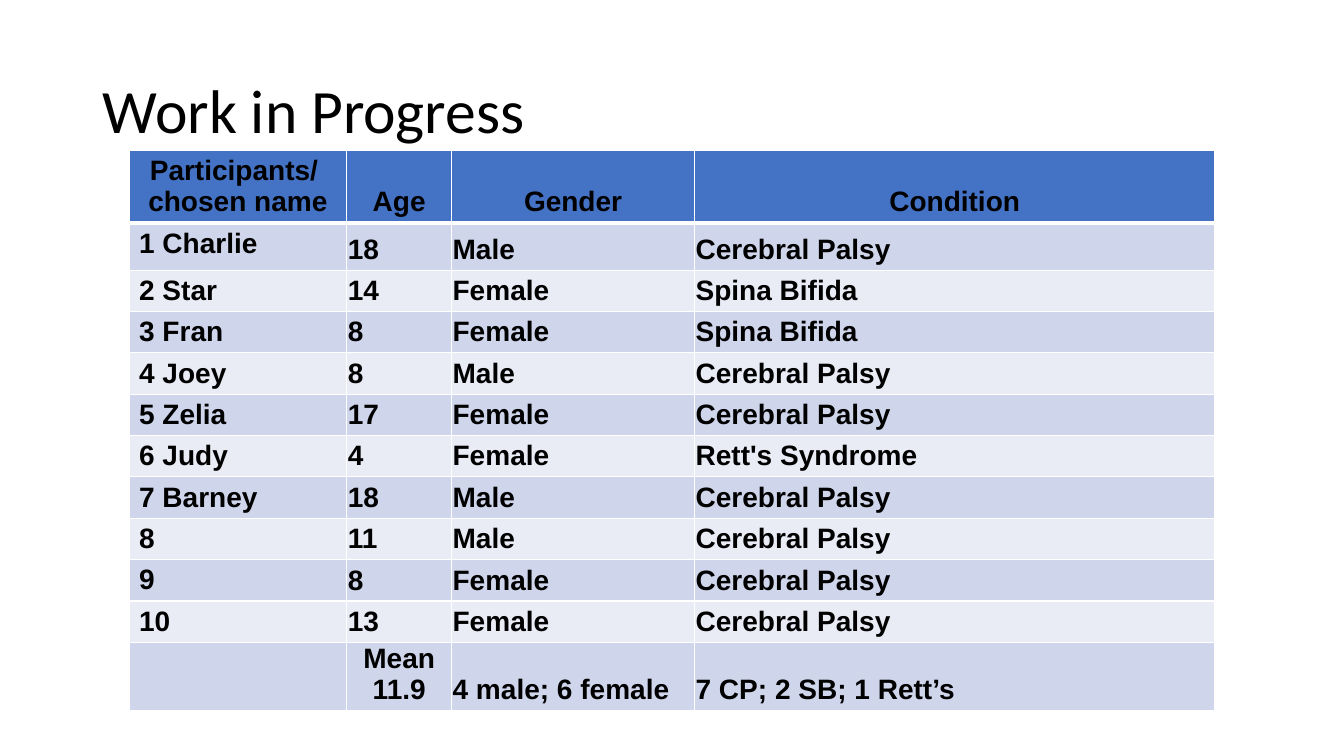
from lxml.etree import SubElement
from pptx import Presentation
from pptx.dml.color import RGBColor
from pptx.enum.text import MSO_ANCHOR as Anchor, PP_ALIGN as Align
from pptx.oxml import parse_xml
from pptx.oxml.ns import nsdecls, qn
from pptx.util import Pt

EMU_PER_PX = 9144  # 100 px to the inch

BLACK = RGBColor(0x00, 0x00, 0x00)
WHITE = RGBColor(0xFF, 0xFF, 0xFF)
HEADER_BLUE = RGBColor(0x44, 0x72, 0xC4)
BANDS = (RGBColor(0xE9, 0xEB, 0xF5), RGBColor(0xCF, 0xD5, 0xEA))

COLUMN_WIDTHS = (216, 104, 241, 516)
ROW_HEIGHTS = (50, 47) + (41,) * 10
PARTICIPANTS = (
    ("Participants/ \nchosen name", "Age", "Gender", "Condition"),
    ("1 Charlie", "18", "Male", "Cerebral Palsy"),
    ("2 Star", "14", "Female", "Spina Bifida"),
    ("3 Fran", "8", "Female", "Spina Bifida"),
    ("4 Joey", "8", "Male", "Cerebral Palsy"),
    ("5 Zelia", "17", "Female", "Cerebral Palsy"),
    ("6 Judy", "4", "Female", "Rett's Syndrome"),
    ("7 Barney", "18", "Male", "Cerebral Palsy"),
    ("8", "11", "Male", "Cerebral Palsy"),
    ("9", "8", "Female", "Cerebral Palsy"),
    ("10", "13", "Female", "Cerebral Palsy"),
    ("", "Mean 11.9", "4 male; 6 female", "7 CP; 2 SB; 1 Rett’s"),
)


def px(length):
    return length * EMU_PER_PX


def write(frame, text, *, font, size, bold=False, align=Align.LEFT, spacing=1.0):
    """Fill a text frame, one paragraph to a line of text."""
    frame.word_wrap = True
    frame.text = text
    for para in frame.paragraphs:
        para.alignment = align
        para.line_spacing = spacing
        for span in para.runs:
            span.font.name = font
            span.font.size = Pt(size)
            span.font.bold = bold
            span.font.color.rgb = BLACK


def set_borders(cell, bottom_points):
    properties = cell._tc.get_or_add_tcPr()
    widths = {"lnL": 1, "lnR": 1, "lnT": 1, "lnB": bottom_points}
    for index, (side, points) in enumerate(widths.items()):
        line = parse_xml(f'<a:{side} {nsdecls("a")} w="{Pt(points)}"/>')
        fill = SubElement(line, qn("a:solidFill"))
        SubElement(fill, qn("a:srgbClr"), val=str(WHITE))
        properties.insert(index, line)


class SlideBuilder:
    title_font = "Calibri"
    table_font = "Arial"

    def __init__(self, page):
        self.page = page

    def title(self, text, left, top, width, height):
        box = self.page.shapes.title
        box.left, box.top, box.width, box.height = map(px, (left, top, width, height))
        box.text_frame.vertical_anchor = Anchor.MIDDLE
        write(box.text_frame, text, font=self.title_font, size=44, spacing=0.9)

    def table(self, rows, left, top, widths, heights):
        frame = self.page.shapes.add_table(
            len(rows), len(widths), px(left), px(top), px(sum(widths)), px(sum(heights)))
        table = frame.table
        for column, width in zip(table.columns, widths):
            column.width = px(width)
        for row, height in zip(table.rows, heights):
            row.height = px(height)
        for row_index, texts in enumerate(rows):
            for column_index, text in enumerate(texts):
                self.cell(table.cell(row_index, column_index), text, row_index, column_index)

    def cell(self, cell, text, row, column):
        is_header = row == 0
        cell.fill.solid()
        cell.fill.fore_color.rgb = HEADER_BLUE if is_header else BANDS[row % 2]
        set_borders(cell, 3 if is_header else 1)
        if column > 0:
            cell.vertical_anchor = Anchor.BOTTOM
            cell.margin_left = cell.margin_right = cell.margin_top = px(1)
            cell.margin_bottom = px(5)
        centred = is_header or text.startswith("Mean")
        write(cell.text_frame, text, font=self.table_font, size=20, bold=True,
              align=Align.CENTER if centred else Align.LEFT)


def main():
    deck = Presentation()
    deck.slide_width, deck.slide_height = px(1333), px(750)
    builder = SlideBuilder(deck.slides.add_slide(deck.slide_layouts[5]))
    builder.title("Work in Progress", 92, 40, 1150, 145)
    builder.table(PARTICIPANTS, 128, 149, COLUMN_WIDTHS, ROW_HEIGHTS)
    deck.save("out.pptx")


if __name__ == "__main__":
    main()
